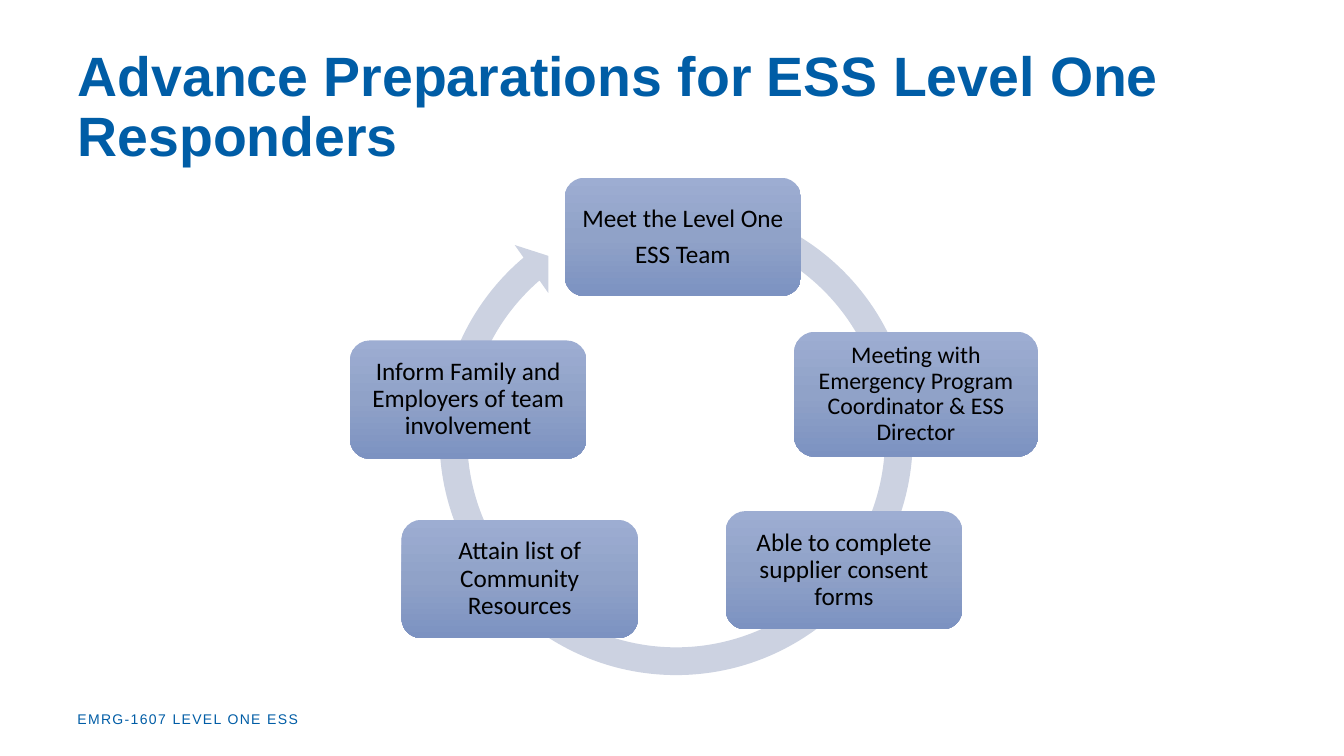
from copy import deepcopy

from pptx import Presentation
from pptx.dml.color import RGBColor
from pptx.enum.shapes import MSO_SHAPE as Shape
from pptx.enum.text import MSO_ANCHOR as Anchor, MSO_AUTO_SIZE as Fit, PP_ALIGN as Align
from pptx.oxml.ns import qn
from pptx.util import Cm, Pt

BLUE = "005DA6"
SHADES = [(0, "9DADD2"), (0.5, "90A2C8"), (1, "7C92C1")]

# left, top, width, height in cm, text size, paragraphs
STEPS = [
    (14.23, 4.48, 5.96, 2.98, 18, ["Meet the Level One", "ESS Team"]),
    (20.01, 8.36, 6.15, 3.15, 17,
     ["Meeting with Emergency Program Coordinator & ESS Director"]),
    (18.29, 12.88, 5.96, 2.98, 18, ["Able to complete supplier consent forms"]),
    (10.12, 13.1, 5.96, 2.98, 18, ["Attain list of Community Resources"]),
    (8.82, 8.58, 5.96, 2.98, 18, ["Inform Family and Employers of team involvement"]),
]


def color(code):
    return RGBColor.from_string(code)


def write(para, text, size, face, code, bold=False):
    """Add one formatted run to a paragraph and return it."""
    run = para.add_run()
    run.text = text
    run.font.size = Pt(size)
    run.font.name = face
    run.font.bold = bold
    run.font.color.rgb = color(code)
    return run


deck = Presentation()
deck.slide_width, deck.slide_height = Cm(33.87), Cm(19.05)
slide = deck.slides.add_slide(deck.slide_layouts[5])
shapes = slide.shapes

# Title
title = shapes.title
title.left, title.top, title.width, title.height = Cm(1.7), Cm(1.02), Cm(30.48), Cm(3.43)
frame = title.text_frame
frame.word_wrap = True
frame.auto_size = Fit.NONE
frame.vertical_anchor = Anchor.MIDDLE
para = frame.paragraphs[0]
para.alignment = Align.LEFT
para.line_spacing = 0.9
write(para, "Advance Preparations for ESS Level One Responders", 39.6, "Arial", BLUE, True)

# Footer
foot = shapes.add_textbox(Cm(1.7), Cm(17.78), Cm(15.24), Cm(0.69))
frame = foot.text_frame
frame.word_wrap = True
frame.vertical_anchor = Anchor.MIDDLE
run = write(frame.paragraphs[0], "EMRG-1607 LEVEL ONE ESS", 10, "Arial", BLUE)
run.font._element.set("spc", "100")

# Ring behind the steps
ring = shapes.add_shape(Shape.CIRCULAR_ARROW, Cm(10.69), Cm(4.7), Cm(12.7), Cm(12.7))
for i, value in enumerate([0.055, 3.307, 137.713, 173.888, 0.058]):
    ring.adjustments[i] = value
ring.shadow.inherit = False
ring.fill.solid()
ring.fill.fore_color.rgb = color("CCD2E1")
ring.line.fill.background()

# Steps
for left, top, width, height, size, lines in STEPS:
    box = shapes.add_shape(Shape.ROUNDED_RECTANGLE, Cm(left), Cm(top), Cm(width), Cm(height))
    box.shadow.inherit = False
    box.line.fill.background()
    box.fill.gradient()
    box.fill.gradient_angle = 270
    stops = box._element.spPr.find(qn("a:gradFill")).find(qn("a:gsLst"))
    stops.append(deepcopy(stops[0]))
    for stop, (place, code) in zip(box.fill.gradient_stops, SHADES):
        stop.position = place
        stop.color.rgb = color(code)

    frame = box.text_frame
    frame.word_wrap = True
    frame.vertical_anchor = Anchor.MIDDLE
    frame.margin_left = frame.margin_right = Cm(0.18)
    frame.margin_top = frame.margin_bottom = Cm(0.18)
    for i, line in enumerate(lines):
        para = frame.add_paragraph() if i else frame.paragraphs[0]
        para.alignment = Align.CENTER
        para.line_spacing = 0.9
        para.space_after = Pt(0.35 * size)
        write(para, line, size, "Calibri", "000000")

deck.save("out.pptx")
